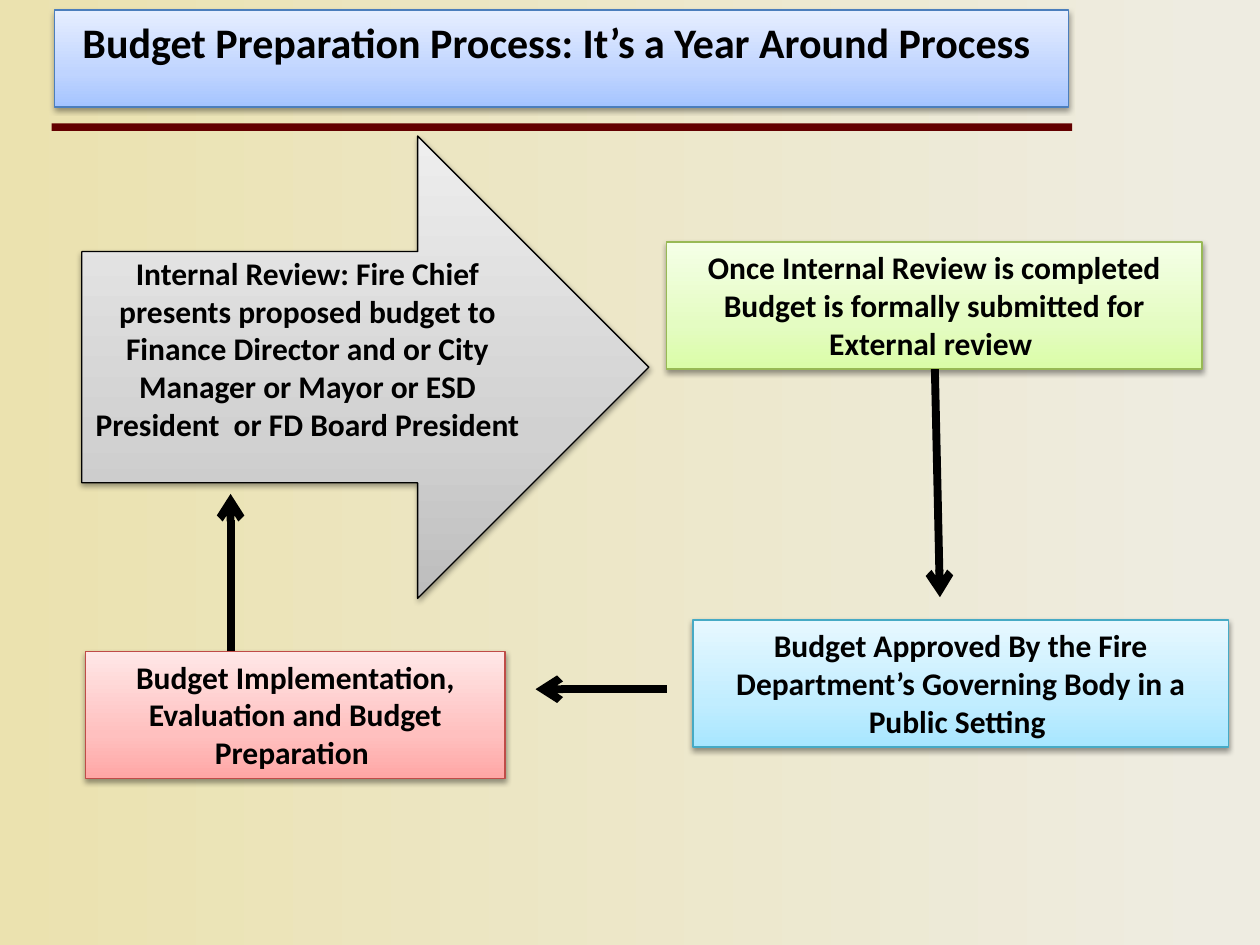
from dataclasses import dataclass

from lxml import etree
from pptx import Presentation
from pptx.dml.color import RGBColor
from pptx.enum.shapes import MSO_CONNECTOR, MSO_SHAPE
from pptx.enum.text import MSO_ANCHOR, PP_ALIGN
from pptx.oxml.ns import qn
from pptx.util import Inches, Pt

RECTANGLE = MSO_SHAPE.RECTANGLE
RIGHT_ARROW = MSO_SHAPE.RIGHT_ARROW
STRAIGHT = MSO_CONNECTOR.STRAIGHT
TOP, MIDDLE = MSO_ANCHOR.TOP, MSO_ANCHOR.MIDDLE
CENTER = PP_ALIGN.CENTER


@dataclass(frozen=True)
class Theme:
    font: str = "Calibri"
    title_size: int = 24
    body_size: int = 18
    ink: str = "000000"
    rule: str = "630000"
    border_width: float = 0.75
    flow_width: float = 4.5
    background: tuple = ((0, "EBE2AF"), (97, "EEECE1"))
    # Each panel: border colour, then gradient from bottom to top
    blue: tuple = ("4B7EBC", "A4C4FF", "BFD4FF", "E6EEFF")
    gray: tuple = ("000000", "BDBDBD", "D1D1D1", "EEEEEE")
    green: tuple = ("98B955", "DAFDA7", "E4FCC2", "F5FFE7")
    cyan: tuple = ("46AAC5", "A7E6FF", "C1EDFF", "E7F8FF")
    red: tuple = ("BF4C48", "FFA6A5", "FFC0BF", "FFE7E7")


THEME = Theme()


def rgb(color):
    return RGBColor.from_string(color)


def paint_gradient(fill, element, stops, angle):
    """Fill with (percent, colour) stops at a clockwise angle."""
    fill.gradient()
    gradient = element.find(".//" + qn("a:gradFill"))
    stop_list = gradient.find(qn("a:gsLst"))
    for old_stop in list(stop_list):
        stop_list.remove(old_stop)
    for percent, color in stops:
        stop = etree.SubElement(stop_list, qn("a:gs"), pos=str(percent * 1000))
        etree.SubElement(stop, qn("a:srgbClr"), val=color)
    gradient.find(qn("a:lin")).set("ang", str(angle * 60000))


def add_soft_shadow(shape):
    shape.shadow.inherit = False
    effects = shape.element.spPr.find(qn("a:effectLst"))
    shadow = etree.SubElement(
        effects, qn("a:outerShdw"), blurRad="40000", dist="20000",
        dir="5400000", rotWithShape="0")
    color = etree.SubElement(shadow, qn("a:srgbClr"), val=THEME.ink)
    etree.SubElement(color, qn("a:alpha"), val="38000")


def write_text(shape, text, *, size=THEME.body_size, anchor=TOP, bottom=0.05):
    frame = shape.text_frame
    frame.word_wrap = True
    frame.vertical_anchor = anchor
    frame.margin_bottom = Inches(bottom)
    paragraph = frame.paragraphs[0]
    paragraph.alignment = CENTER
    run = paragraph.add_run()
    run.text = text
    run.font.name = THEME.font
    run.font.size = Pt(size)
    run.font.bold = True
    run.font.color.rgb = rgb(THEME.ink)


def add_panel(slide, box, colors, text, *, outline=RECTANGLE, **text_format):
    border, *shades = colors
    panel = slide.shapes.add_shape(outline, *map(Inches, box))
    paint_gradient(panel.fill, panel.element, zip((0, 35, 100), shades), 270)
    panel.line.color.rgb = rgb(border)
    panel.line.width = Pt(THEME.border_width)
    add_soft_shadow(panel)
    write_text(panel, text, **text_format)


def add_rule(slide, box):
    rule = slide.shapes.add_shape(RECTANGLE, *map(Inches, box))
    rule.fill.solid()
    rule.fill.fore_color.rgb = rgb(THEME.rule)
    rule.line.fill.background()
    rule.shadow.inherit = False


def add_flow(slide, start, end):
    flow = slide.shapes.add_connector(STRAIGHT, *map(Inches, start + end))
    flow.line.color.rgb = rgb(THEME.ink)
    flow.line.width = Pt(THEME.flow_width)
    etree.SubElement(flow.line._get_or_add_ln(), qn("a:tailEnd"), type="arrow")
    etree.SubElement(flow.element.spPr, qn("a:effectLst"))


def main():
    deck = Presentation()
    deck.slide_width, deck.slide_height = Inches(10), Inches(7.5)
    slide = deck.slides.add_slide(deck.slide_layouts[6])
    paint_gradient(slide.background.fill, slide.element, THEME.background, 0)

    # Heading
    add_rule(slide, (0.41, 0.98, 8.1, 0.06))
    add_panel(slide, (0.43, 0.08, 8.05, 0.77), THEME.blue,
              "Budget Preparation Process: It’s a Year Around Process ",
              size=THEME.title_size)

    # Stages of the yearly cycle
    add_panel(slide, (0.65, 1.08, 4.5, 3.67), THEME.gray,
              "Internal Review: Fire Chief presents proposed budget to "
              "Finance Director and or City Manager or Mayor or ESD "
              "President  or FD Board President ",
              outline=RIGHT_ARROW, anchor=MIDDLE, bottom=0.35)
    add_panel(slide, (5.29, 1.92, 4.25, 1.01), THEME.green,
              "Once Internal Review is completed Budget is formally "
              "submitted for External review ")
    add_panel(slide, (5.5, 4.92, 4.25, 1.01), THEME.cyan,
              "Budget Approved By the Fire Department’s Governing Body "
              "in a Public Setting ")
    add_panel(slide, (0.68, 5.17, 3.33, 1.01), THEME.red,
              "Budget Implementation, Evaluation and Budget Preparation ")

    # Flow between the stages
    for start, end in (
        ((7.42, 2.93), (7.46, 4.74)),
        ((5.29, 5.47), (4.25, 5.47)),
        ((1.83, 5.17), (1.83, 3.92)),
    ):
        add_flow(slide, start, end)

    deck.save("out.pptx")


if __name__ == "__main__":
    main()
